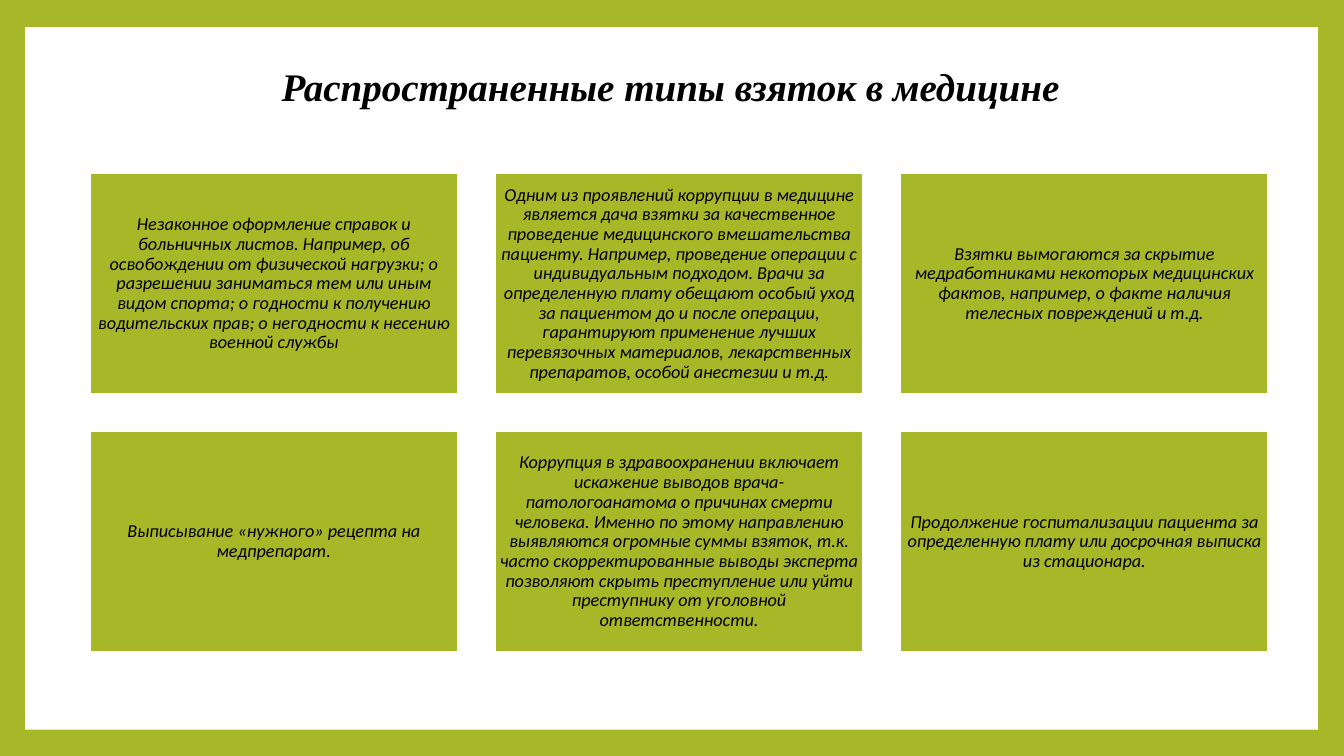
"""Build a slide listing common types of bribery in medicine."""
from dataclasses import dataclass

from pptx import Presentation
from pptx import util as u
from pptx.dml.color import RGBColor
from pptx.enum import shapes, text

GREEN, WHITE, BLACK = "A6B727", "FFFFFF", "000000"
GRID_LEFT, GRID_TOP = 0.89, 1.72
COLUMN_STEP, ROW_STEP = 4.02, 2.56
CARD_WIDTH, CARD_HEIGHT = 3.65, 2.19
CARD_INSET = 0.05


@dataclass(frozen=True)
class Card:
    """A bribery type and its cell in the grid."""

    column: int
    row: int
    wording: str


TITLE = "Распространенные типы взяток в медицине"
CARDS = [
    Card(0, 0, "Незаконное оформление справок и больничных листов. Например, об "
               "освобождении от физической нагрузки; о разрешении заниматься тем или иным "
               "видом спорта; о годности к получению водительских прав; о негодности к "
               "несению военной службы"),
    Card(1, 0, "Одним из проявлений коррупции в медицине является дача взятки за "
               "качественное проведение медицинского вмешательства пациенту. Например, "
               "проведение операции с индивидуальным подходом. Врачи за определенную плату "
               "обещают особый уход за пациентом до и после операции, гарантируют "
               "применение лучших перевязочных материалов, лекарственных препаратов, "
               "особой анестезии и т.д."),
    Card(2, 0, "Взятки вымогаются за скрытие медработниками некоторых медицинских "
               "фактов, например, о факте наличия телесных повреждений и т.д."),
    Card(0, 1, "Выписывание «нужного» рецепта на медпрепарат."),
    Card(1, 1, "Коррупция в здравоохранении включает искажение выводов "
               "врача-патологоанатома о причинах смерти человека. Именно по этому "
               "направлению выявляются огромные суммы взяток, т.к. часто скорректированные "
               "выводы эксперта позволяют скрыть преступление или уйти преступнику от "
               "уголовной ответственности."),
    Card(2, 1, "Продолжение госпитализации пациента за определенную плату или досрочная "
               "выписка из стационара."),
]


def color(value: str) -> RGBColor:
    """Turn a hex string into a colour."""
    return RGBColor.from_string(value)


def add_rectangle(slide, left: float, top: float, width: float, height: float, fill: str):
    """Add a flat filled rectangle without an outline."""
    shape = slide.shapes.add_shape(
        shapes.MSO_SHAPE.RECTANGLE, *map(u.Inches, (left, top, width, height)))
    shape.shadow.inherit = False
    shape.fill.solid()
    shape.fill.fore_color.rgb = color(fill)
    shape.line.fill.background()
    return shape


def write(frame, wording: str, font: str, size: float, bold: bool = False) -> None:
    """Write one centred italic paragraph into a text frame."""
    frame.word_wrap = True
    frame.auto_size = text.MSO_AUTO_SIZE.NONE
    paragraph = frame.paragraphs[0]
    paragraph.alignment = text.PP_ALIGN.CENTER
    paragraph.line_spacing = 0.9
    run = paragraph.add_run()
    run.text = wording
    run.font.name = font
    run.font.size = u.Pt(size)
    run.font.bold = bold
    run.font.italic = True
    run.font.color.rgb = color(BLACK)


def add_panel(slide) -> None:
    """Add the white panel behind everything else on the slide."""
    panel = add_rectangle(slide, 0.25, 0.27, 12.82, 6.97, WHITE)
    slide.shapes.element.insert(2, panel.element)


def set_title(slide) -> None:
    """Place and format the title placeholder."""
    title = slide.shapes.title
    title.left, title.top, title.width, title.height = map(
        u.Inches, (1.25, 0.67, 10.8, 1.03))
    frame = title.text_frame
    frame.vertical_anchor = text.MSO_ANCHOR.TOP
    frame.margin_top = 0
    write(frame, TITLE, "Times New Roman", 27.9, bold=True)


def add_card(slide, card: Card) -> None:
    """Add one card in its grid cell."""
    shape = add_rectangle(
        slide,
        GRID_LEFT + card.column * COLUMN_STEP,
        GRID_TOP + card.row * ROW_STEP,
        CARD_WIDTH, CARD_HEIGHT, GREEN)
    shape.line.color.rgb = color(WHITE)
    shape.line.width = u.Pt(1.5)
    frame = shape.text_frame
    frame.vertical_anchor = text.MSO_ANCHOR.MIDDLE
    frame.margin_left = frame.margin_right = u.Inches(CARD_INSET)
    frame.margin_top = frame.margin_bottom = u.Inches(CARD_INSET)
    write(frame, card.wording, "Calibri", 13)


def main() -> None:
    """Build and save the presentation."""
    presentation = Presentation()
    presentation.slide_width = u.Inches(13.33)
    presentation.slide_height = u.Inches(7.5)
    slide = presentation.slides.add_slide(
        presentation.slide_layouts.get_by_name("Title Only"))
    slide.background.fill.solid()
    slide.background.fill.fore_color.rgb = color(GREEN)
    add_panel(slide)
    set_title(slide)
    for card in CARDS:
        add_card(slide, card)
    presentation.save("out.pptx")


if __name__ == "__main__":
    main()
